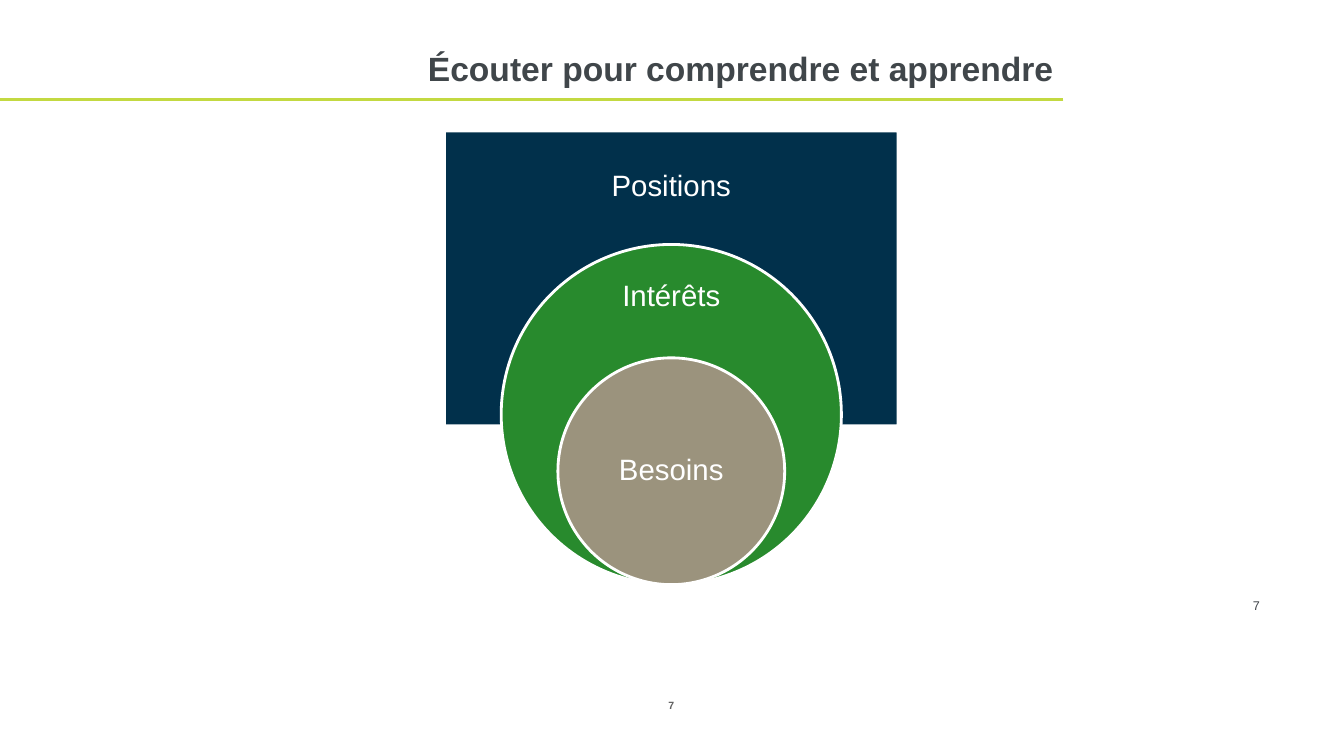
from dataclasses import dataclass

from lxml import etree
from pptx import Presentation
from pptx import util as u
from pptx.dml.color import RGBColor
from pptx.enum import shapes, text
from pptx.oxml import ns

WHITE = RGBColor(0xFF, 0xFF, 0xFF)
NAVY = RGBColor(0x01, 0x30, 0x4B)
GREEN = RGBColor(0x28, 0x8A, 0x2D)
TAUPE = RGBColor(0x9B, 0x93, 0x7D)
LIME = RGBColor(0xC3, 0xD9, 0x41)
SLATE = RGBColor(0x40, 0x46, 0x4A)
INK = RGBColor(0x3E, 0x42, 0x48)
GREY = RGBColor(0x60, 0x60, 0x60)

CENTRE = 479.5
BASELINE = 417.6
UNIT = 81
RULE_RIGHT = 759.6
RULE_TOP = 71.3


@dataclass(frozen=True)
class Layer:
    name: str
    preset: shapes.MSO_SHAPE
    units: int
    fill: RGBColor
    label_top: float
    label_height: float


@dataclass(frozen=True)
class PageNumber:
    left: float
    top: float
    width: float
    height: float
    size: float
    colour: RGBColor
    bold: bool
    align: text.PP_ALIGN
    anchor: text.MSO_ANCHOR


LAYERS = (
    Layer("Positions", shapes.MSO_SHAPE.DOWN_ARROW_CALLOUT, 4, NAVY, 109.4, 49),
    Layer("Intérêts", shapes.MSO_SHAPE.OVAL, 3, GREEN, 189.4, 45.4),
    Layer("Besoins", shapes.MSO_SHAPE.OVAL, 2, TAUPE, 295.9, 80.6),
)
PAGE_NUMBERS = (
    PageNumber(460.8, 495.4, 37.4, 17.3, 7.5, GREY, True,
               text.PP_ALIGN.CENTER, text.MSO_ANCHOR.MIDDLE),
    PageNumber(887.8, 423.4, 62.6, 18, 9, INK, False,
               text.PP_ALIGN.LEFT, text.MSO_ANCHOR.TOP),
)


def set_values(target, values: dict) -> None:
    for name, value in values.items():
        setattr(target, name, value)


def write(box, words: str, size: float, colour: RGBColor, bold: bool,
          align: text.PP_ALIGN, anchor: text.MSO_ANCHOR, spacing: float = 1) -> None:
    frame = box.text_frame
    set_values(frame, {"word_wrap": True, "vertical_anchor": anchor,
                       "auto_size": text.MSO_AUTO_SIZE.NONE})
    para = frame.paragraphs[0]
    set_values(para, {"alignment": align, "line_spacing": spacing})
    span = para.add_run()
    span.text = words
    set_values(span.font, {"name": "Arial", "size": u.Pt(size), "bold": bold})
    span.font.color.rgb = colour


def draw_title(page) -> None:
    title = page.shapes.title
    set_values(title, {"left": u.Pt(0), "top": u.Pt(9.4),
                       "width": u.Pt(RULE_RIGHT), "height": u.Pt(78.5)})
    write(title, "Écouter pour comprendre et apprendre", 24, SLATE, True,
          text.PP_ALIGN.RIGHT, text.MSO_ANCHOR.MIDDLE)


def draw_rule(page) -> None:
    rule = page.shapes.add_connector(
        shapes.MSO_CONNECTOR.STRAIGHT, u.Pt(RULE_RIGHT), u.Pt(RULE_TOP),
        u.Pt(0), u.Pt(RULE_TOP))
    rule.line.color.rgb = LIME
    rule.line.width = u.Pt(2)
    etree.SubElement(rule._element.spPr, ns.qn("a:effectLst"))


def draw_number(page, number: PageNumber) -> None:
    box = page.shapes.add_textbox(u.Pt(number.left), u.Pt(number.top),
                                  u.Pt(number.width), u.Pt(number.height))
    write(box, "7", number.size, number.colour, number.bold,
          number.align, number.anchor)


def draw_layer(page, layer: Layer) -> None:
    side = layer.units * UNIT
    shape = page.shapes.add_shape(
        layer.preset, u.Pt(CENTRE - side / 2), u.Pt(BASELINE - side),
        u.Pt(side), u.Pt(side))
    shape.shadow.inherit = False
    shape.fill.solid()
    shape.fill.fore_color.rgb = layer.fill
    shape.line.color.rgb = WHITE
    shape.line.width = u.Pt(2)

    label_width = 114
    label = page.shapes.add_textbox(
        u.Pt(CENTRE - label_width / 2), u.Pt(layer.label_top),
        u.Pt(label_width), u.Pt(layer.label_height))
    set_values(label.text_frame, {f"margin_{side_name}": u.Pt(11.5) for side_name
                                  in ("left", "top", "right", "bottom")})
    write(label, layer.name, 21, WHITE, False, text.PP_ALIGN.CENTER,
          text.MSO_ANCHOR.MIDDLE, 0.9)


def main() -> None:
    deck = Presentation()
    set_values(deck, {"slide_width": u.Pt(960), "slide_height": u.Pt(540)})
    page = deck.slides.add_slide(deck.slide_layouts.get_by_name("Title Only"))
    draw_rule(page)
    for number in PAGE_NUMBERS:
        draw_number(page, number)
    draw_title(page)
    for layer in LAYERS:
        draw_layer(page, layer)
    deck.save("out.pptx")


if __name__ == "__main__":
    main()
